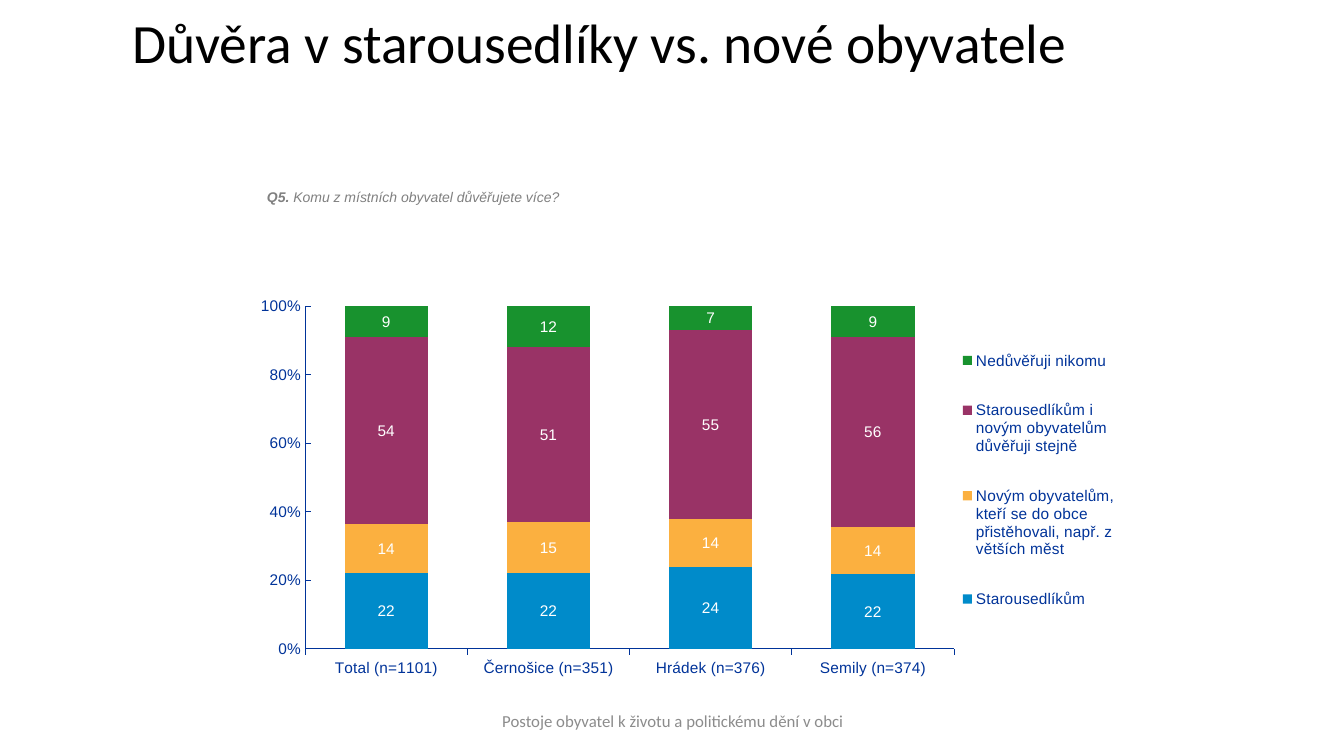
"""Build a slide comparing trust in long-time and new residents."""
import pptx
import pptx.chart.data
import pptx.dml.color
import pptx.enum.chart
import pptx.enum.text
import pptx.oxml
import pptx.oxml.ns
import pptx.util

TITLE = "Důvěra v starousedlíky vs. nové obyvatele"
QUESTION = [("Q5. ", True), ("Komu z\u00a0místních obyvatel důvěřujete více?", False)]
FOOTER = "Postoje obyvatel k životu a politickému dění v obci"
TOWNS = ["Total (n=1101)", "Černošice (n=351)", "Hrádek (n=376)", "Semily (n=374)"]
ANSWERS = [
    ("Starousedlíkům", "blue", (22, 22, 24, 22)),
    ("Novým obyvatelům, kteří se do obce přistěhovali, např. z větších měst",
     "orange", (14, 15, 14, 14)),
    ("Starousedlíkům i novým obyvatelům důvěřuji stejně", "plum", (54, 51, 55, 56)),
    ("Nedůvěřuji nikomu", "green", (9, 12, 7, 9)),
]
COLORS = {
    "black": "000000", "white": "FFFFFF", "gray": "808080", "footer": "8C8C8C",
    "navy": "003399", "blue": "008BCA", "orange": "FBB040", "plum": "993366",
    "green": "18922E",
}
BOXES = {
    "title": (122, 21, 1164, 49),
    "footer": (446, 701, 454, 40),
    "question": (263, 190, 869, 19),
    "chart": (243, 235, 889, 445),
}
PLOT_LAYOUT = (0.07, 0.16, 0.73, 0.77)
LEGEND_LAYOUT = (0.8, 0.19, 0.19, 0.72)


def px(value):
    return pptx.util.Emu(round(value * 914400 / 100.8))


def place(name):
    return [px(value) for value in BOXES[name]]


def color(name):
    return pptx.dml.color.RGBColor.from_string(COLORS[name])


def style_font(font, face, size, color_name):
    font.name = face
    font.size = pptx.util.Pt(size)
    font.color.rgb = color(color_name)


def add_run(paragraph, text, face, size, color_name):
    run = paragraph.add_run()
    run.text = text
    style_font(run.font, face, size, color_name)
    return run


def add_text_box(slide, name):
    frame = slide.shapes.add_textbox(*place(name)).text_frame
    frame.word_wrap = True
    frame.vertical_anchor = pptx.enum.text.MSO_ANCHOR.MIDDLE
    return frame


def layout_xml(position, inner):
    target = '<c:layoutTarget val="inner"/>' if inner else ""
    modes = '<c:xMode val="edge"/><c:yMode val="edge"/>'
    sizes = "".join(f'<c:{tag} val="{value}"/>' for tag, value in zip("xywh", position))
    return pptx.oxml.parse_xml(
        f'<c:layout {pptx.oxml.ns.nsdecls("c")}><c:manualLayout>'
        f"{target}{modes}{sizes}</c:manualLayout></c:layout>")


def style_axis(axis, tick_mark):
    axis.has_major_gridlines = False
    axis.major_tick_mark = tick_mark
    axis.minor_tick_mark = pptx.enum.chart.XL_TICK_MARK.NONE
    axis.format.line.color.rgb = color("navy")
    axis.format.line.width = pptx.util.Pt(0.75)
    style_font(axis.tick_labels.font, "Arial", 11, "navy")


def add_trust_chart(slide):
    data = pptx.chart.data.CategoryChartData(number_format="#,##0")
    data.categories = TOWNS
    for name, _, values in ANSWERS:
        data.add_series(name, values)
    chart = slide.shapes.add_chart(
        pptx.enum.chart.XL_CHART_TYPE.COLUMN_STACKED_100, *place("chart"), data).chart
    chart.has_title = False
    style_font(chart.font, "Arial", 11, "navy")

    tick_marks = pptx.enum.chart.XL_TICK_MARK
    style_axis(chart.category_axis, tick_marks.OUTSIDE)
    style_axis(chart.value_axis, tick_marks.INSIDE)
    chart.value_axis.minimum_scale = 0
    chart.value_axis.maximum_scale = 1
    chart.value_axis.major_unit = 0.2
    chart.value_axis.tick_labels.number_format = "0%"
    chart.value_axis.tick_labels.number_format_is_linked = False

    plot = chart.plots[0]
    plot.gap_width = 95
    plot.overlap = 100
    plot.vary_by_categories = False
    for series, (_, color_name, _) in zip(plot.series, ANSWERS):
        series.format.fill.solid()
        series.format.fill.fore_color.rgb = color(color_name)
        labels = series.data_labels
        labels.show_value = True
        labels.number_format = "#,##0"
        labels.number_format_is_linked = False
        style_font(labels.font, "Arial", 11, "white")

    chart.has_legend = True
    legend = chart.legend
    legend.position = pptx.enum.chart.XL_LEGEND_POSITION.RIGHT
    legend.include_in_layout = False
    style_font(legend.font, "Arial", 11, "navy")

    qn = pptx.oxml.ns.qn
    plot_area = chart.element.find(qn("c:chart")).find(qn("c:plotArea"))
    for element, position, inner in ((plot_area, PLOT_LAYOUT, True),
                                     (chart.element.find(".//" + qn("c:legend")),
                                      LEGEND_LAYOUT, False)):
        for old_layout in element.findall(qn("c:layout")):
            element.remove(old_layout)
        element.insert(0 if inner else 1, layout_xml(position, inner))


def main():
    presentation = pptx.Presentation()
    presentation.slide_width = px(1344)
    presentation.slide_height = px(756)
    slide = presentation.slides.add_slide(presentation.slide_layouts[5])

    title = slide.shapes.title
    title.left, title.top, title.width, title.height = place("title")
    title.text_frame.auto_size = pptx.enum.text.MSO_AUTO_SIZE.NONE
    title.text_frame.vertical_anchor = pptx.enum.text.MSO_ANCHOR.MIDDLE
    paragraph = title.text_frame.paragraphs[0]
    paragraph.alignment = pptx.enum.text.PP_ALIGN.LEFT
    paragraph.line_spacing = 0.9
    add_run(paragraph, TITLE, "Calibri", 39.6, "black")

    paragraph = add_text_box(slide, "footer").paragraphs[0]
    paragraph.alignment = pptx.enum.text.PP_ALIGN.CENTER
    add_run(paragraph, FOOTER, "Calibri", 12, "footer")

    frame = add_text_box(slide, "question")
    frame.vertical_anchor = pptx.enum.text.MSO_ANCHOR.TOP
    frame.margin_left = frame.margin_right = frame.margin_bottom = px(4)
    frame.margin_top = 0
    paragraph = frame.paragraphs[0]
    paragraph.line_spacing = 0.9
    for text, bold in QUESTION:
        run = add_run(paragraph, text, "Arial", 10, "gray")
        run.font.bold = bold
        run.font.italic = True

    add_trust_chart(slide)
    presentation.save("out.pptx")


if __name__ == "__main__":
    main()
